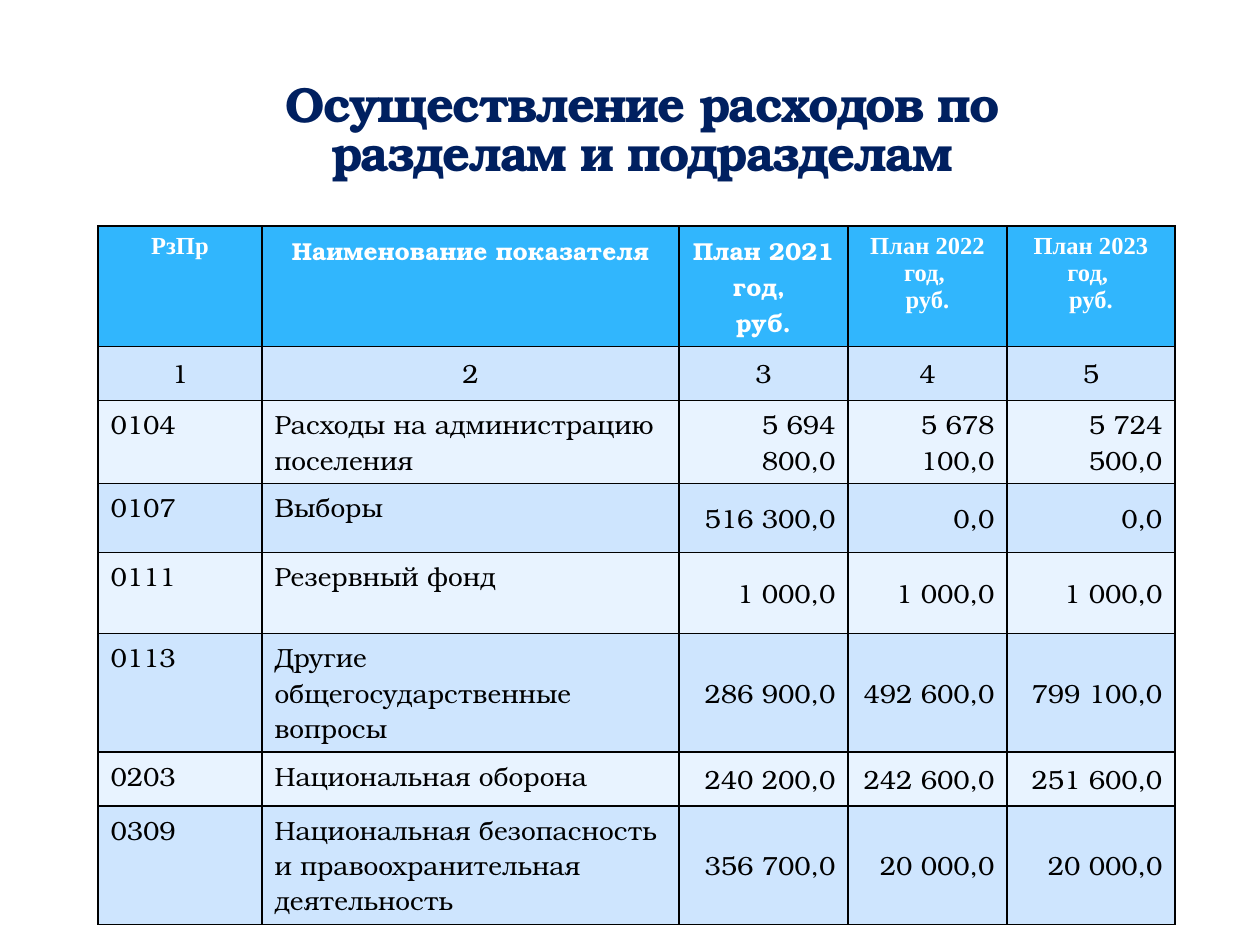
import dataclasses

import lxml.etree
import pptx
import pptx.dml.color
import pptx.enum.text
import pptx.oxml
import pptx.util

PX = 914400 // 126  # slide scale: 126 px to the inch
BODY_FONT = "TeX Gyre Bonum"
HEADER_FONT = "Times New Roman"
HEADER_FILL = "31B6FD"
BAND_FILLS = ("CEE5FE", "E8F3FF")
NAMESPACE = "http://schemas.openxmlformats.org/drawingml/2006/main"

LEFT = pptx.enum.text.PP_ALIGN.LEFT
CENTER = pptx.enum.text.PP_ALIGN.CENTER
RIGHT = pptx.enum.text.PP_ALIGN.RIGHT
TOP = pptx.enum.text.MSO_ANCHOR.TOP
MIDDLE = pptx.enum.text.MSO_ANCHOR.MIDDLE


@dataclasses.dataclass(frozen=True)
class TextStyle:
    font: str
    size: int
    color: str
    bold: bool
    alignment: pptx.enum.text.PP_ALIGN
    anchor: pptx.enum.text.MSO_ANCHOR


@dataclasses.dataclass(frozen=True)
class ExpenseRow:
    height: int
    texts: tuple[str, ...]


TITLE_STYLE = TextStyle(BODY_FONT, 28, "002060", True, CENTER,
                        pptx.enum.text.MSO_ANCHOR.BOTTOM)
HEADER_STYLE = TextStyle(HEADER_FONT, 14, "FFFFFF", True, CENTER, TOP)
HEADER_BODY_STYLE = dataclasses.replace(HEADER_STYLE, font=BODY_FONT)
NUMBER_STYLE = TextStyle(BODY_FONT, 15, "000000", False, CENTER, MIDDLE)
NAME_STYLE = dataclasses.replace(NUMBER_STYLE, alignment=LEFT, anchor=TOP)
AMOUNT_STYLE = dataclasses.replace(NUMBER_STYLE, alignment=RIGHT)

COLUMN_WIDTHS = (164, 417, 169, 159, 168)
ROWS = (
    ExpenseRow(117, ("РзПр", "Наименование показателя", "План 2021 год, \nруб.",
                     "План 2022 год, \nруб.", "План 2023 год, \nруб.")),
    ExpenseRow(54, ("1", "2", "3", "4", "5")),
    ExpenseRow(54, ("0104", "Расходы на администрацию поселения",
                    "5 694 800,0", "5 678 100,0", "5 724 500,0")),
    ExpenseRow(69, ("0107", "Выборы", "516 300,0", "0,0", "0,0")),
    ExpenseRow(81, ("0111", "Резервный фонд", "1 000,0", "1 000,0", "1 000,0")),
    ExpenseRow(58, ("0113", "Другие общегосударственные вопросы",
                    "286 900,0", "492 600,0", "799 100,0")),
    ExpenseRow(54, ("0203", "Национальная оборона",
                    "240 200,0", "242 600,0", "251 600,0")),
    ExpenseRow(111, ("0309", "Национальная безопасность и правоохранительная деятельность",
                     "356 700,0", "20 000,0", "20 000,0")),
)


def rgb(color: str) -> pptx.dml.color.RGBColor:
    return pptx.dml.color.RGBColor.from_string(color)


def line_element(tag: str, width: float, color: str, alpha: int = 100) -> lxml.etree._Element:
    return pptx.oxml.parse_xml(
        f'<a:{tag} xmlns:a="{NAMESPACE}" w="{pptx.util.Pt(width)}"><a:solidFill>'
        f'<a:srgbClr val="{color}"><a:alpha val="{alpha * 1000}"/></a:srgbClr>'
        f'</a:solidFill><a:prstDash val="solid"/></a:{tag}>')


def write_text(text_frame: pptx.text.text.TextFrame, text: str, style: TextStyle) -> None:
    text_frame.text = text
    for paragraph in text_frame.paragraphs:
        paragraph.alignment = style.alignment
        for run in paragraph.runs:
            run.font.name = style.font
            run.font.size = pptx.util.Pt(style.size)
            run.font.bold = style.bold
            run.font.color.rgb = rgb(style.color)


def add_title(slide: pptx.slide.Slide, text: str) -> None:
    title = slide.shapes.title
    title.left, title.top, title.width, title.height = (
        length * PX for length in (158, 118, 968, 63))
    text_frame = title.text_frame
    write_text(text_frame, text, TITLE_STYLE)
    text_frame.word_wrap = True
    text_frame.auto_size = pptx.enum.text.MSO_AUTO_SIZE.NONE
    text_frame.vertical_anchor = TITLE_STYLE.anchor
    text_frame.margin_top = text_frame.margin_bottom = 0
    paragraph = text_frame.paragraphs[0]
    paragraph.line_spacing = 0.83
    # Tight letter spacing and a faint outline
    properties = paragraph.runs[0].font._element
    properties.set("spc", "-100")
    properties.insert(0, line_element("ln", 0.25, "AFCCDE", 25))


def cell_style(row: int, column: int) -> TextStyle:
    if row == 0:
        return HEADER_BODY_STYLE if column in (1, 2) else HEADER_STYLE
    if row == 1:
        return NUMBER_STYLE
    return NAME_STYLE if column < 2 else AMOUNT_STYLE


def format_cell(cell: pptx.table._Cell, text: str, style: TextStyle, fill: str) -> None:
    write_text(cell.text_frame, text, style)
    cell.vertical_anchor = style.anchor
    cell.fill.solid()
    cell.fill.fore_color.rgb = rgb(fill)
    properties = cell._tc.get_or_add_tcPr()
    for position, tag in enumerate(("lnL", "lnR", "lnT", "lnB")):
        properties.insert(position, line_element(tag, 1, "000000"))


def add_expense_table(slide: pptx.slide.Slide) -> None:
    height = sum(row.height for row in ROWS)
    table = slide.shapes.add_table(
        len(ROWS), len(COLUMN_WIDTHS), 98 * PX, 226 * PX,
        sum(COLUMN_WIDTHS) * PX, height * PX).table
    for column, width in zip(table.columns, COLUMN_WIDTHS):
        column.width = width * PX
    for row_index, row in enumerate(ROWS):
        table.rows[row_index].height = row.height * PX
        fill = HEADER_FILL if row_index == 0 else BAND_FILLS[(row_index - 1) % 2]
        for column_index, text in enumerate(row.texts):
            format_cell(table.cell(row_index, column_index), text,
                        cell_style(row_index, column_index), fill)


def main() -> None:
    presentation = pptx.Presentation()
    presentation.slide_width = 1260 * PX
    presentation.slide_height = 945 * PX
    slide = presentation.slides.add_slide(presentation.slide_layouts[5])
    add_title(slide, "Осуществление расходов по разделам и подразделам")
    add_expense_table(slide)
    presentation.save("out.pptx")


if __name__ == "__main__":
    main()
